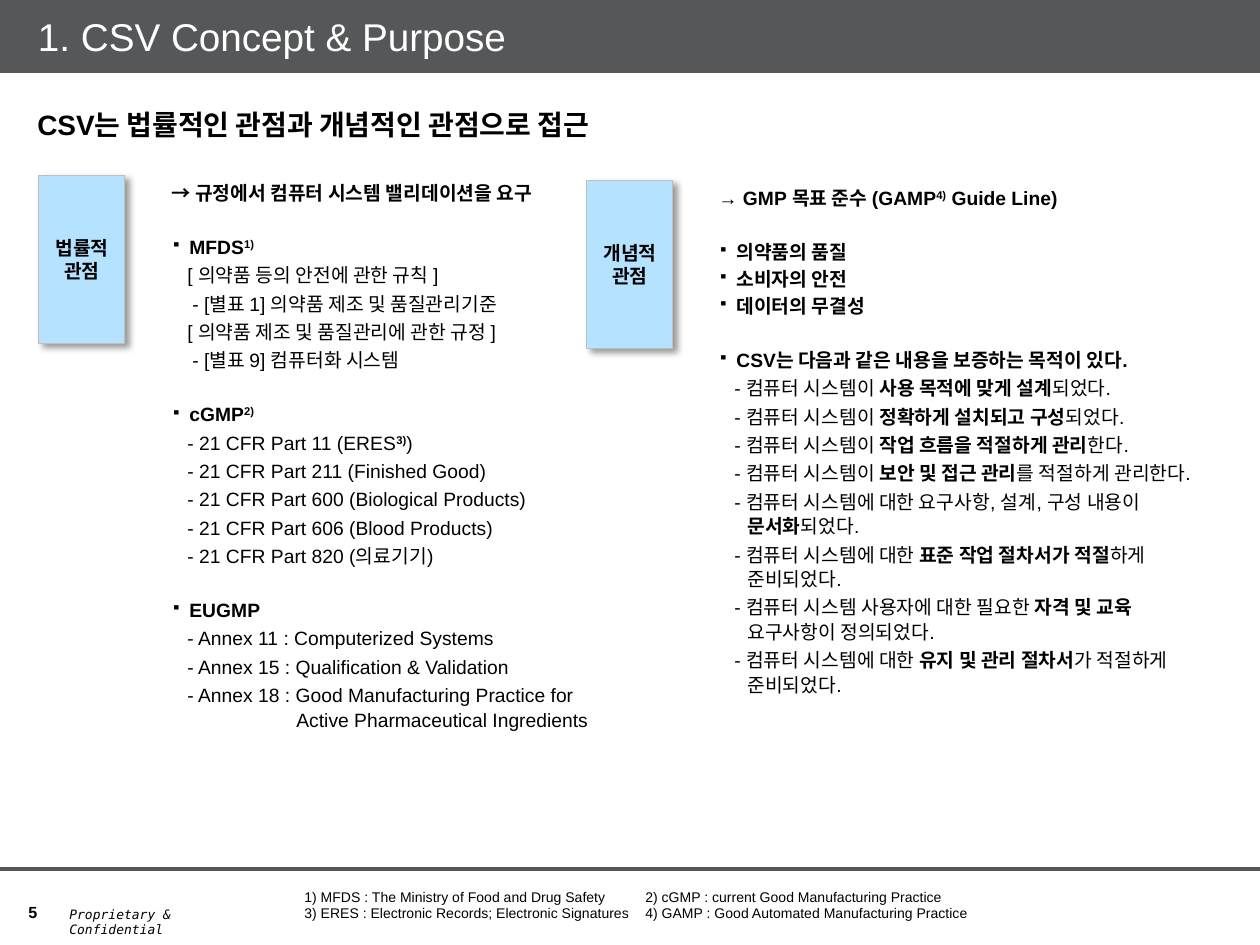
import pptx
import pptx.dml.color
import pptx.enum.shapes
import pptx.enum.text
import pptx.oxml
import pptx.oxml.ns
import pptx.util
from lxml import etree

DARK, BLACK, WHITE = "555759", "000000", "FFFFFF"
ITEM, BRACKET, ANNEX = (16, 29), (21, 21), (16, 125)

LEGAL = [
    ("lead", "→ 규정에서 컴퓨터 시스템 밸리데이션을 요구"),
    ("section", "MFDS^1)^"),
    (ITEM, "[ 의약품 등의 안전에 관한 규칙 ]"),
    (BRACKET, "- [별표 1] 의약품 제조 및 품질관리기준"),
    (ITEM, "[ 의약품 제조 및 품질관리에 관한 규정 ]"),
    (BRACKET, "- [별표 9] 컴퓨터화 시스템"),
    ("section", "cGMP^2)^"),
    (ITEM, "- 21 CFR Part 11 (ERES*^3)^*)"),
    (ITEM, "- 21 CFR Part 211 (Finished Good)"),
    (ITEM, "- 21 CFR Part 600 (Biological Products)"),
    (ITEM, "- 21 CFR Part 606 (Blood Products)"),
    (ITEM, "- 21 CFR Part 820 (의료기기)"),
    ("section", "EUGMP"),
    (ITEM, "- Annex 11 : Computerized Systems"),
    (ITEM, "- Annex 15 : Qualification & Validation"),
    (ANNEX, "- Annex 18 : Good Manufacturing Practice for\vActive Pharmaceutical Ingredients"),
]
CONCEPT = [
    ("lead", "→ GMP 목표 준수 (GAMP^4)^ Guide Line)"),
    ("section", "의약품의 품질"),
    ("bullet", "소비자의 안전"),
    ("bullet", "데이터의 무결성"),
    ("section", "CSV는 다음과 같은 내용을 보증하는 목적이 있다."),
    (ITEM, "- 컴퓨터 시스템이 *사용 목적에 맞게 설계*되었다."),
    (ITEM, "- 컴퓨터 시스템이 *정확하게 설치되고 구성*되었다."),
    (ITEM, "- 컴퓨터 시스템이 *작업 흐름을 적절하게 관리*한다."),
    (ITEM, "- 컴퓨터 시스템이 *보안 및 접근 관리*를 적절하게 관리한다."),
    (ITEM, "- 컴퓨터 시스템에 대한 요구사항, 설계, 구성 내용이\v*문서화*되었다."),
    (ITEM, "- 컴퓨터 시스템에 대한 *표준 작업 절차서가 적절*하게\v준비되었다."),
    (ITEM, "- 컴퓨터 시스템 사용자에 대한 필요한 *자격 및 교육*\v요구사항이 정의되었다."),
    (ITEM, "- 컴퓨터 시스템에 대한 *유지 및 관리 절차서*가 적절하게\v준비되었다."),
]
FOOTNOTES = (
    "1) MFDS : The Ministry of Food and Drug Safety\t2) cGMP : current Good Manufacturing Practice\n"
    "3) ERES : Electronic Records; Electronic Signatures\t4) GAMP : Good Automated Manufacturing Practice"
)


def px(value):
    """Turn pixels into EMU."""
    return round(value * 914400 / 126)


def color(value):
    """Turn a hex string into a colour."""
    return pptx.dml.color.RGBColor.from_string(value)


def add_xml(parent, tag, **attributes):
    """Append a drawing element to a parent and return it."""
    return etree.SubElement(parent, pptx.oxml.ns.qn("a:" + tag), attributes)


class SlideStyle:
    """Hold the style and the current slide."""

    font = "Arial"
    body_size = 11
    gap = 2.2
    section_gap = 17.6
    line_pitch = 14

    def __init__(self, slide):
        """Keep the slide to draw on."""
        self.slide = slide

    def format_font(self, font, size, fill=BLACK, bold=False, name=None):
        """Apply size, colour, weight and typeface."""
        font.size = pptx.util.Pt(size)
        font.color.rgb = color(fill)
        font.bold = bold
        font.name = name or self.font

    def frame(self, left, top, width, height):
        """Add an empty wrapping text box and return its frame."""
        shape = self.slide.shapes.add_textbox(px(left), px(top), px(width), px(height))
        shape.text_frame.word_wrap = True
        return shape.text_frame

    def text(self, box, text, size, **style):
        """Add evenly formatted text and return its frame."""
        frame = self.frame(*box)
        frame.text = text
        for paragraph in frame.paragraphs:
            for run in paragraph.runs:
                self.format_font(run.font, size, **style)
        return frame

    def rectangle(self, box, text, fill, size, ink, bold, margins):
        """Add a filled rectangle with vertically centred text."""
        shape = self.slide.shapes.add_shape(
            pptx.enum.shapes.MSO_SHAPE.RECTANGLE, *[px(value) for value in box])
        shape.shadow.inherit = False
        shape.fill.solid()
        shape.fill.fore_color.rgb = color(fill)
        shape.line.fill.background()
        frame = shape.text_frame
        frame.text = text
        frame.vertical_anchor = pptx.enum.text.MSO_ANCHOR.MIDDLE
        frame.margin_left, frame.margin_right = [px(value) for value in margins]
        for paragraph in frame.paragraphs:
            paragraph.alignment = pptx.enum.text.PP_ALIGN.LEFT
            self.format_font(paragraph.runs[0].font, size, ink, bold)
        return shape

    def viewpoint(self, left, top, text):
        """Add a shadowed viewpoint label."""
        shape = self.rectangle((left, top, 86, 168), text, "B5E2FF", self.body_size, BLACK, True, (5, 5))
        shape.line.color.rgb = color("BFBFBF")
        shape.line.width = pptx.util.Pt(0.5)
        for paragraph in shape.text_frame.paragraphs:
            paragraph.alignment = pptx.enum.text.PP_ALIGN.CENTER
        effects = shape._element.spPr.find(pptx.oxml.ns.qn("a:effectLst"))
        shadow = add_xml(effects, "outerShdw", blurRad="50800", dist="38100", dir="2700000",
                         algn="tl", rotWithShape="0")
        add_xml(add_xml(shadow, "srgbClr", val=BLACK), "alpha", val="40000")

    def marked_runs(self, paragraph, text, bold):
        """Write text in which * marks bold, ^ superscript and \\v a line break."""
        for bold_index, part in enumerate(text.split("*")):
            for raised_index, piece in enumerate(part.split("^")):
                for line_index, line in enumerate(piece.split("\v")):
                    if line_index:
                        paragraph.add_line_break()
                    if line:
                        run = paragraph.add_run()
                        run.text = line
                        self.format_font(run.font, self.body_size, bold=bold or bold_index % 2 == 1)
                        if raised_index % 2:
                            run.font._element.set("baseline", "30000")

    def outline(self, box, rows):
        """Add a column of lead, bulleted and indented paragraphs."""
        frame = self.frame(*box)
        for index, (kind, text) in enumerate(rows):
            paragraph = frame.add_paragraph() if index else frame.paragraphs[0]
            properties = paragraph._p.get_or_add_pPr()
            is_item = isinstance(kind, tuple)
            first, hanging = kind if is_item else (0, 13 if kind == "lead" else 18)
            properties.set("marL", str(px(hanging)))
            properties.set("indent", str(px(first - hanging)))
            if kind in ("section", "bullet"):
                add_xml(properties, "buSzPct", val="70000")
                add_xml(properties, "buChar", char="▪")
            if is_item:
                paragraph.line_spacing = pptx.util.Pt(self.line_pitch)
            if index:
                paragraph.space_before = pptx.util.Pt(self.section_gap if kind == "section" else self.gap)
            self.marked_runs(paragraph, text, not is_item)

    def rule(self, top):
        """Add a full-width horizontal line."""
        line = self.slide.shapes.add_connector(
            pptx.enum.shapes.MSO_CONNECTOR.STRAIGHT, 0, px(top), px(1260), px(top))
        line.line.color.rgb = color(DARK)
        line.line.width = pptx.util.Pt(2.25)
        add_xml(line._element.spPr, "effectLst")


def main():
    """Build and save the slide."""
    presentation = pptx.Presentation()
    presentation.slide_width, presentation.slide_height = px(1260), px(945)
    style = SlideStyle(presentation.slides.add_slide(presentation.slide_layouts[6]))

    number = style.text((16, 879, 180, 49), "5", 9.2, bold=True)
    number.vertical_anchor = pptx.enum.text.MSO_ANCHOR.BOTTOM
    notice = style.text((57, 900, 174, 29), "Proprietary & Confidential", 7.4, name="DejaVu Sans Mono")
    notice.paragraphs[0].runs[0].font.italic = True
    style.rule(869)

    style.viewpoint(39, 175, "법률적\n관점")
    style.outline((159, 175, 447, 617), LEGAL)
    style.viewpoint(587, 180, "개념적\n관점")
    style.outline((706, 180, 554, 562), CONCEPT)

    style.rectangle((0, 0, 1260, 73), "1. CSV Concept & Purpose", DARK, 22.1, WHITE, False, (38, 6))
    style.text((25, 101, 1210, 47), "CSV는 법률적인 관점과 개념적인 관점으로 접근", 16, bold=True)
    footnotes = style.text((292, 882, 794, 63), FOOTNOTES, 8)
    for paragraph in footnotes.paragraphs:
        tabs = add_xml(paragraph._p.get_or_add_pPr(), "tabLst")
        add_xml(tabs, "tab", pos=str(px(341)), algn="l")

    presentation.save("out.pptx")


if __name__ == "__main__":
    main()
